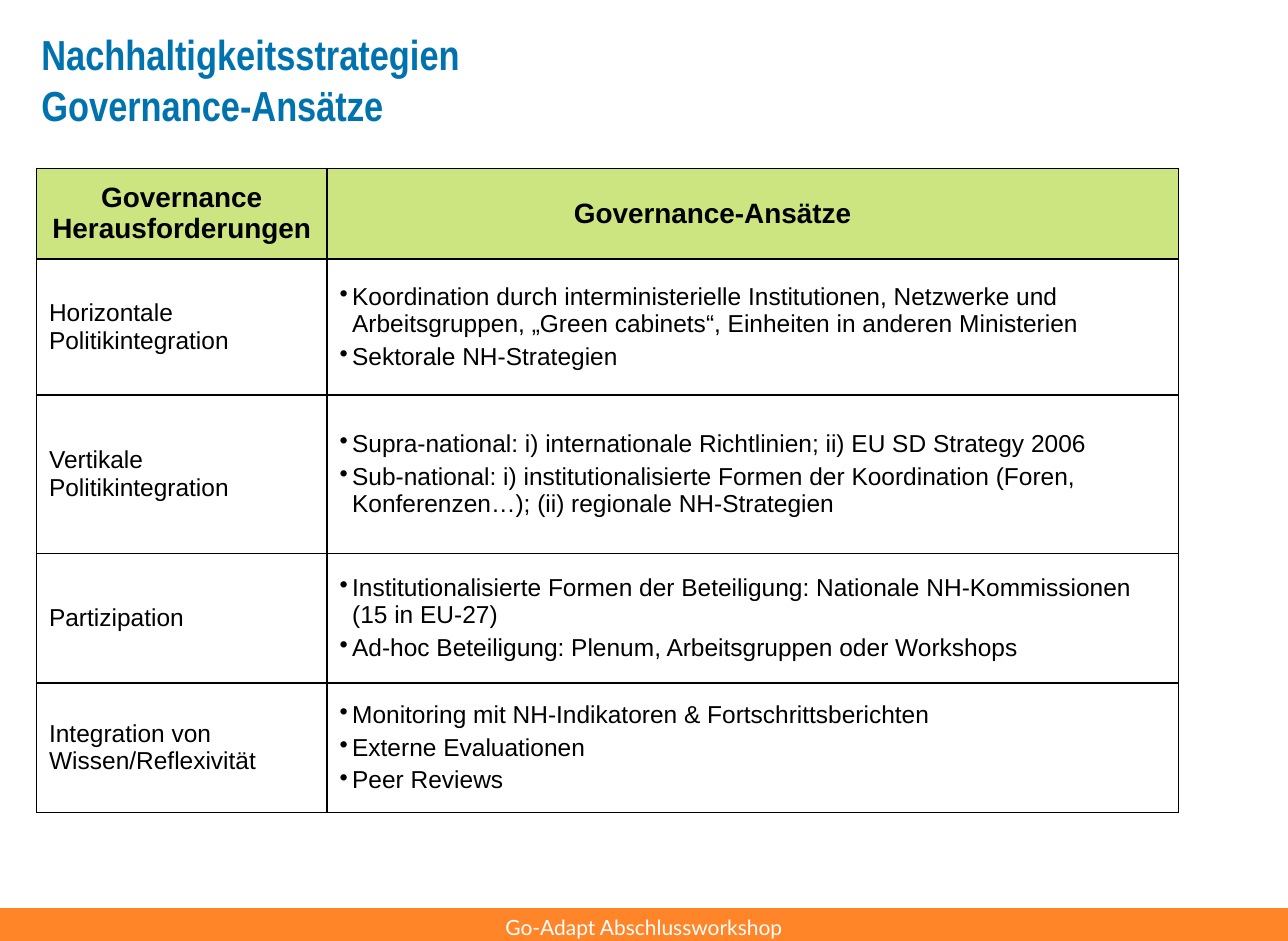
from dataclasses import dataclass

from lxml import etree
from pptx import Presentation
from pptx.dml.color import RGBColor
from pptx.enum import shapes, text
from pptx.oxml import ns
from pptx.util import Pt


@dataclass(frozen=True)
class Theme:
    title: str = "0073AF"
    header: str = "CCE580"
    footer: str = "FF8528"
    ink: str = "000000"
    white: str = "FFFFFF"
    title_size: float = 24
    header_size: float = 16
    body_size: float = 14
    footer_size: float = 12
    body_font: str = "Arial"
    title_font: str = "Arial Narrow"
    footer_font: str = "Lato"


THEME = Theme()
HEADERS = ["Governance Herausforderungen", "Governance-Ansätze"]
APPROACHES = [
    ("Horizontale Politikintegration", [
        "Koordination durch interministerielle Institutionen, Netzwerke und "
        "Arbeitsgruppen, „Green cabinets“, Einheiten in anderen Ministerien",
        "Sektorale NH-Strategien"]),
    ("Vertikale Politikintegration", [
        "Supra-national: i) internationale Richtlinien; ii) EU SD Strategy 2006",
        "Sub-national: i) institutionalisierte Formen der Koordination "
        "(Foren, Konferenzen…); (ii) regionale NH-Strategien"]),
    ("Partizipation", [
        "Institutionalisierte Formen der Beteiligung: Nationale "
        "NH-Kommissionen (15 in EU-27)",
        "Ad-hoc Beteiligung: Plenum, Arbeitsgruppen oder Workshops"]),
    ("Integration von Wissen/Reflexivität", [
        "Monitoring mit NH-Indikatoren & Fortschrittsberichten",
        "Externe Evaluationen",
        "Peer Reviews"]),
]
COLUMN_WIDTHS = [166.3, 487.5]
ROW_HEIGHTS = [51.8, 77.8, 90.7, 74.2, 74.2]
HEADER_SHIFT = 46


def format_runs(p, font, size, color, bold=False):
    for r in p.runs:
        r.font.name = font
        r.font.size = Pt(size)
        r.font.bold = bold
        r.font.color.rgb = RGBColor.from_string(color)


def add_title(s, title):
    tf = s.shapes.add_textbox(Pt(16.6), Pt(13), Pt(634.3), Pt(84.2)).text_frame
    tf.word_wrap = True
    p = tf.paragraphs[0]
    p.text = title
    format_runs(p, THEME.title_font, THEME.title_size, THEME.title, True)


def add_footer(s, label, width):
    sp = s.shapes.add_shape(shapes.MSO_SHAPE.RECTANGLE, 0, Pt(519.8), width, Pt(21.6))
    sp.shadow.inherit = False
    sp.fill.solid()
    sp.fill.fore_color.rgb = RGBColor.from_string(THEME.footer)
    sp.line.fill.background()
    tf = sp.text_frame
    tf.vertical_anchor = text.MSO_ANCHOR.MIDDLE
    p = tf.paragraphs[0]
    p.text = label
    p.alignment = text.PP_ALIGN.CENTER
    format_runs(p, THEME.footer_font, THEME.footer_size, THEME.white)


def add_borders(cell):
    tcPr = cell._tc.get_or_add_tcPr()
    for side in ("lnL", "lnR", "lnT", "lnB"):
        ln = etree.SubElement(tcPr, ns.qn(f"a:{side}"), w=str(Pt(1)))
        fill = etree.SubElement(ln, ns.qn("a:solidFill"))
        etree.SubElement(fill, ns.qn("a:srgbClr"), val=THEME.ink)


def add_bullet(p):
    pPr = p._p.get_or_add_pPr()
    pPr.set("marL", str(Pt(7.2)))
    pPr.set("indent", str(Pt(-7.2)))
    etree.SubElement(pPr, ns.qn("a:buChar"), char="•")


def fill_cell(cell, lines, header=False, bullets=False):
    add_borders(cell)
    cell.vertical_anchor = text.MSO_ANCHOR.MIDDLE
    if header:
        cell.fill.solid()
        cell.fill.fore_color.rgb = RGBColor.from_string(THEME.header)
    else:
        cell.fill.background()
    tf = cell.text_frame
    tf.text = "\n".join(lines)
    size = THEME.header_size if header else THEME.body_size
    for i, p in enumerate(tf.paragraphs):
        if bullets:
            add_bullet(p)
        if header:
            p.alignment = text.PP_ALIGN.CENTER
        if i:
            p.space_before = Pt(3)
        format_runs(p, THEME.body_font, size, THEME.ink, header)


def add_governance_table(s):
    frame = s.shapes.add_table(
        len(ROW_HEIGHTS), len(COLUMN_WIDTHS), Pt(20.9), Pt(96.4),
        Pt(sum(COLUMN_WIDTHS)), Pt(sum(ROW_HEIGHTS)))
    table = frame.table
    table.first_row = table.horz_banding = False
    for column, width in zip(table.columns, COLUMN_WIDTHS):
        column.width = Pt(width)
    for row, height in zip(table.rows, ROW_HEIGHTS):
        row.height = Pt(height)
    for i, label in enumerate(HEADERS):
        fill_cell(table.cell(0, i), [label], header=True)
    table.cell(0, 1).margin_right = Pt(7.2 + HEADER_SHIFT)
    for i, (challenge, approaches) in enumerate(APPROACHES, 1):
        fill_cell(table.cell(i, 0), [challenge])
        fill_cell(table.cell(i, 1), approaches, bullets=True)


def main():
    prs = Presentation()
    prs.slide_width, prs.slide_height = Pt(737.28), Pt(538.56)
    s = prs.slides.add_slide(prs.slide_layouts[6])
    add_footer(s, "Go-Adapt Abschlussworkshop", prs.slide_width)
    add_governance_table(s)
    add_title(s, "Nachhaltigkeitsstrategien\vGovernance-Ansätze")
    prs.save("out.pptx")


if __name__ == "__main__":
    main()
